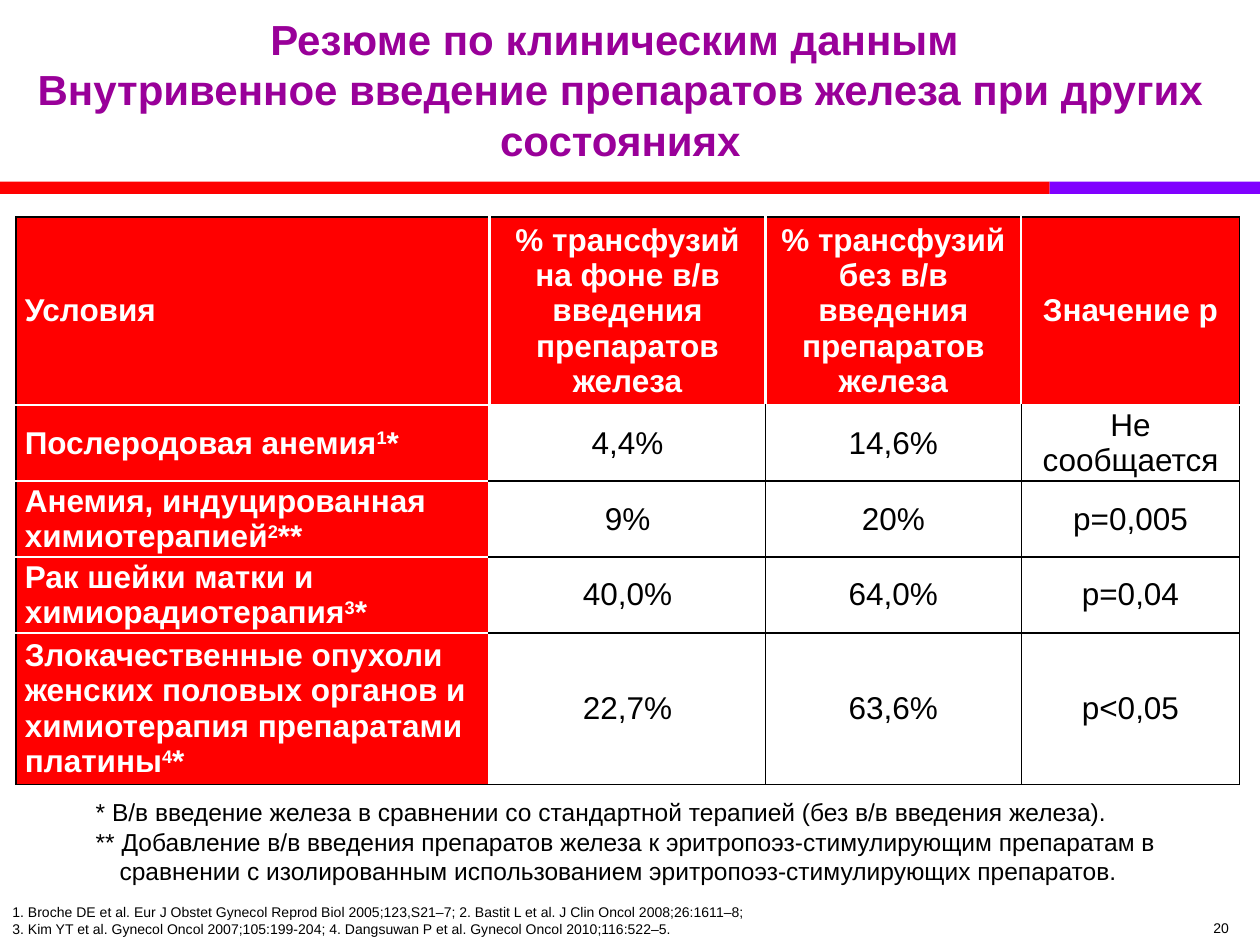
from lxml.etree import SubElement
from pptx import Presentation
from pptx.dml.color import RGBColor
from pptx.enum.shapes import MSO_SHAPE
from pptx.enum.text import MSO_ANCHOR, PP_ALIGN
from pptx.oxml import parse_xml
from pptx.oxml.ns import nsdecls, qn
from pptx.util import Cm, Pt

RED, PURPLE, VIOLET = "FF0000", "990099", "8000FF"
BLACK, WHITE = "000000", "FFFFFF"


def color(hex_string):
    return RGBColor.from_string(hex_string)


class SlideBuilder:
    font_name = "Arial"

    def __init__(self, slide):
        self.slide = slide

    def style(self, paragraph, size, hex_color=BLACK, bold=False, align=PP_ALIGN.LEFT):
        font = paragraph.font
        font.name, font.size, font.bold = self.font_name, Pt(size), bold
        font.color.rgb = color(hex_color)
        paragraph.alignment = align

    def title(self, text, left, top, width, height):
        title = self.slide.shapes.title
        title.left, title.top = Cm(left), Cm(top)
        title.width, title.height = Cm(width), Cm(height)
        frame = title.text_frame
        frame.margin_left = frame.margin_right = frame.margin_top = frame.margin_bottom = 0
        frame.vertical_anchor = MSO_ANCHOR.BOTTOM
        frame.text = text
        self.style(frame.paragraphs[0], 24, PURPLE, True, PP_ALIGN.CENTER)

    def bar(self, left, top, width, height, hex_color):
        bar = self.slide.shapes.add_shape(
            MSO_SHAPE.RECTANGLE, Cm(left), Cm(top), Cm(width), Cm(height))
        bar.shadow.inherit = False
        bar.fill.solid()
        bar.fill.fore_color.rgb = color(hex_color)
        bar.line.fill.background()

    def text(self, lines, left, top, width, height, size,
             anchor=MSO_ANCHOR.TOP, margins=True, wrap=True):
        box = self.slide.shapes.add_textbox(Cm(left), Cm(top), Cm(width), Cm(height))
        frame = box.text_frame
        frame.word_wrap, frame.vertical_anchor = wrap, anchor
        if not margins:
            frame.margin_left = frame.margin_right = frame.margin_top = frame.margin_bottom = 0
        frame.text = "\n".join(lines)
        for paragraph in frame.paragraphs:
            self.style(paragraph, size)
        return frame

    def hanging_indent(self, paragraph, indent):
        properties = paragraph._p.get_or_add_pPr()
        properties.set("marL", str(Cm(indent)))
        properties.set("indent", str(-Cm(indent)))

    def borders(self, cell, sides):
        properties = cell._tc.get_or_add_tcPr()
        for index, side in enumerate("LRTB"):
            hex_color = sides[side]
            width = Pt(1.5 if hex_color == WHITE else 1)
            line = parse_xml(f'<a:ln{side} {nsdecls("a")} w="{width}"/>')
            fill = SubElement(line, qn("a:solidFill"))
            SubElement(fill, qn("a:srgbClr")).set("val", hex_color)
            properties.insert(index, line)

    def cell(self, cell, parts, is_label, align):
        cell.margin_left = cell.margin_right = Cm(0.18)
        cell.margin_top = cell.margin_bottom = 0
        cell.vertical_anchor = MSO_ANCHOR.MIDDLE
        if is_label:
            cell.fill.solid()
            cell.fill.fore_color.rgb = color(RED)
        else:
            cell.fill.background()
        paragraph = cell.text_frame.paragraphs[0]
        for index, part in enumerate(parts):
            run = paragraph.add_run()
            run.text = part
            if index == 1:  # reference number
                run._r.get_or_add_rPr().set("baseline", "30000")
        self.style(paragraph, 18, WHITE if is_label else BLACK, is_label, align)
        paragraph.space_after = Pt(6)

    def table(self, rows, left, top, widths, heights):
        table = self.slide.shapes.add_table(
            len(rows), len(widths), Cm(left), Cm(top),
            Cm(sum(widths)), Cm(sum(heights))).table
        for column, width in zip(table.columns, widths):
            column.width = Cm(width)
        for row, height in zip(table.rows, heights):
            row.height = Cm(height)
        last_row, last_column = len(rows) - 1, len(widths) - 1
        for r, row in enumerate(rows):
            for c, content in enumerate(row):
                parts = (content,) if isinstance(content, str) else content
                is_label = r == 0 or c == 0
                cell = table.cell(r, c)
                self.cell(cell, parts, is_label,
                          PP_ALIGN.LEFT if c == 0 else PP_ALIGN.CENTER)
                # White lines around red cells, black ones elsewhere and outside
                self.borders(cell, {
                    "L": WHITE if c == 1 or (r == 0 and c > 0) else BLACK,
                    "R": WHITE if is_label and c < last_column else BLACK,
                    "T": WHITE if r == 1 or (c == 0 and r > 0) else BLACK,
                    "B": WHITE if is_label and r < last_row else BLACK,
                })


def main():
    presentation = Presentation()
    presentation.slide_width, presentation.slide_height = Cm(25.4), Cm(19.05)
    builder = SlideBuilder(presentation.slides.add_slide(presentation.slide_layouts[5]))

    # Heading and two-coloured rule
    builder.title("Резюме по клиническим данным \v"
                  "Внутривенное введение препаратов железа при других состояниях",
                  0.3, 0.53, 24.41, 2.79)
    builder.bar(0, 3.66, 21.16, 0.25, RED)
    builder.bar(21.16, 3.66, 4.24, 0.25, VIOLET)

    # Transfusion rates by condition
    rates = [
        ("Условия", "% трансфузий на фоне в/в введения препаратов железа",
         "% трансфузий без в/в введения препаратов железа", "Значение p"),
        (("Послеродовая анемия", "1", "*"), "4,4%", "14,6%", "Не сообщается"),
        (("Анемия, индуцированная химиотерапией", "2", "**"), "9%", "20%", "p=0,005"),
        (("Рак шейки матки и химиорадиотерапия", "3", "*"), "40,0%", "64,0%", "p=0,04"),
        (("Злокачественные опухоли женских половых органов и химиотерапия "
          "препаратами платины", "4", "*"), "22,7%", "63,6%", "p<0,05"),
    ]
    builder.table(rates, 0.32, 4.37, [9.55, 5.56, 5.16, 4.4],
                  [3.8, 1.53, 1.53, 1.53, 3.05])

    # Footnotes
    footnotes = builder.text(
        ["* В/в введение железа в сравнении со стандартной терапией (без в/в введения железа).",
         "** Добавление в/в введения препаратов железа к эритропоэз-стимулирующим препаратам "
         "в сравнении с изолированным использованием эритропоэз-стимулирующих препаратов."],
        1.68, 15.95, 22.02, 2.06, 14)
    builder.hanging_indent(footnotes.paragraphs[1], 0.48)

    # References and slide number
    builder.text(
        ["1. Broche DE et al. Eur J Obstet Gynecol Reprod Biol 2005;123,S21–7; "
         "2. Bastit L et al. J Clin Oncol 2008;26:1611–8;\v"
         "3. Kim YT et al. Gynecol Oncol 2007;105:199-204; "
         "4. Dangsuwan P et al. Gynecol Oncol 2010;116:522–5."],
        0, 18.08, 22.63, 0.94, 8, MSO_ANCHOR.BOTTOM)
    builder.text(["20"], 24.46, 18.54, 0.56, 0.33, 8, margins=False, wrap=False)

    presentation.save("out.pptx")


if __name__ == "__main__":
    main()
